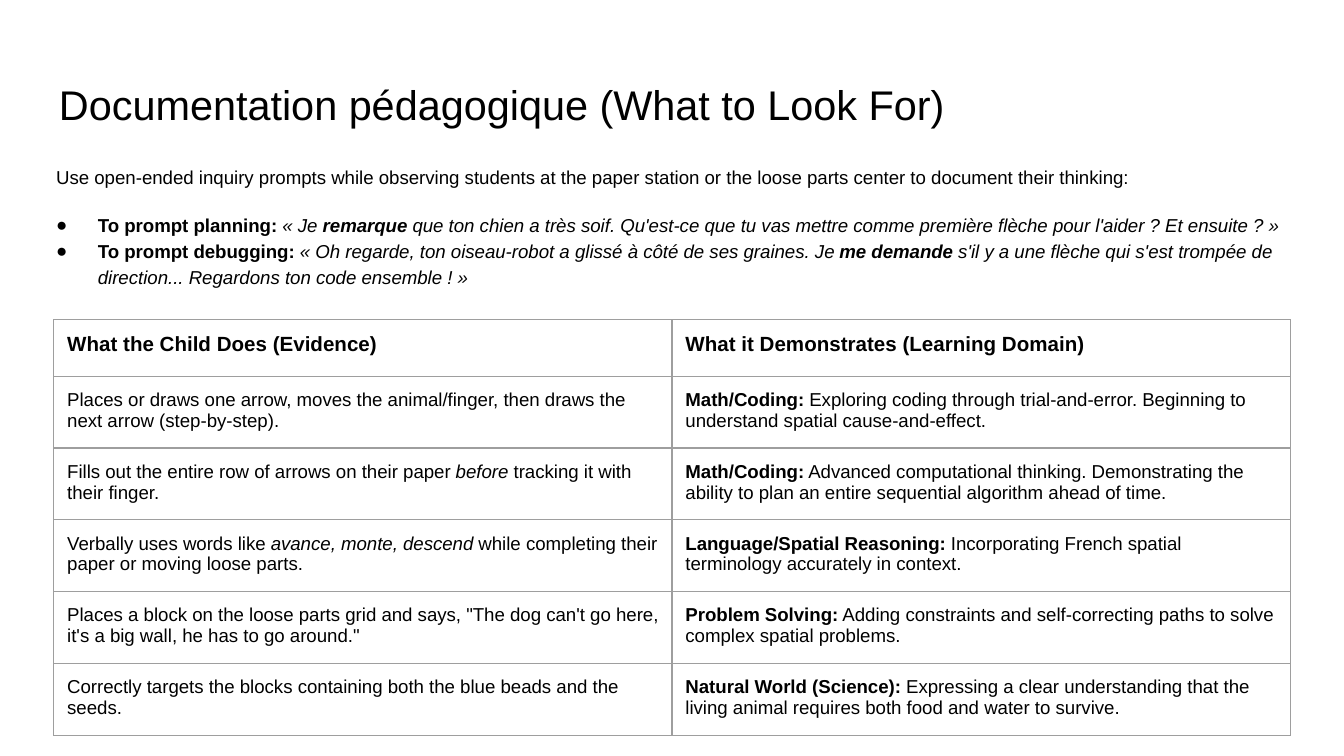
"""Build a slide on pedagogical documentation: inquiry prompts above an evidence table."""
from lxml.etree import SubElement
from pptx import Presentation
from pptx.dml.color import RGBColor
from pptx.enum.text import MSO_ANCHOR as Anchor
from pptx.oxml.ns import qn
from pptx.util import Inches, Pt

COLORS = {"text": "000000", "border": "9E9E9E"}
FONT = "Arial"
SIZES = {"title": 22.2, "header": 11, "body": 10}
STYLES = {
    "plain": {"bold": False, "italic": False},
    "bold": {"bold": True, "italic": False},
    "italic": {"bold": False, "italic": True},
    "both": {"bold": True, "italic": True},
}

TITLE = [("Documentation pédagogique (What to Look For)", "plain")]
INTRO = [("Use open-ended inquiry prompts while observing students at the paper station "
          "or the loose parts center to document their thinking:", "plain")]
PROMPTS = [
    [("To prompt planning: ", "bold"), ("« Je ", "italic"), ("remarque", "both"),
     (" que ton chien a très soif. Qu'est-ce que tu vas mettre comme première flèche "
      "pour l'aider ? Et ensuite ? »", "italic")],
    [("To prompt debugging: ", "bold"),
     ("« Oh regarde, ton oiseau-robot a glissé à côté de ses graines. Je ", "italic"),
     ("me demande", "both"),
     (" s'il y a une flèche qui s'est trompée de direction... "
      "Regardons ton code ensemble ! »", "italic")],
]
HEADERS = ["What the Child Does (Evidence)", "What it Demonstrates (Learning Domain)"]
EVIDENCE = [
    ([("Places or draws one arrow, moves the animal/finger, then draws the next arrow "
       "(step-by-step).", "plain")],
     "Math/Coding:",
     " Exploring coding through trial-and-error. Beginning to understand spatial "
     "cause-and-effect."),
    ([("Fills out the entire row of arrows on their paper ", "plain"), ("before", "italic"),
      (" tracking it with their finger.", "plain")],
     "Math/Coding:",
     " Advanced computational thinking. Demonstrating the ability to plan an entire "
     "sequential algorithm ahead of time."),
    ([("Verbally uses words like ", "plain"), ("avance, monte, descend", "italic"),
      (" while completing their paper or moving loose parts.", "plain")],
     "Language/Spatial Reasoning:",
     " Incorporating French spatial terminology accurately in context."),
    ([("Places a block on the loose parts grid and says, \"The dog can't go here, "
       "it's a big wall, he has to go around.\"", "plain")],
     "Problem Solving:",
     " Adding constraints and self-correcting paths to solve complex spatial problems."),
    ([("Correctly targets the blocks containing both the blue beads and the seeds.", "plain")],
     "Natural World (Science):",
     " Expressing a clear understanding that the living animal requires both food and "
     "water to survive."),
]

SLIDE_WIDTH = Inches(10)
SLIDE_HEIGHT = SLIDE_WIDTH * 9 // 16
TITLE_BOX = (0.34, 0.49, 9.32, 0.63)
PROMPT_BOX = (0.32, 1.11, 9.36, 1.62)
TABLE_LEFT, TABLE_TOP = 0.4, 2.38
COLUMN_WIDTH, ROW_HEIGHT = 4.6, 0.42
MARGIN = Inches(0.1)
MARGINS = {f"margin_{side}": MARGIN for side in ("left", "top", "right", "bottom")}
BULLET_INDENT = Inches(0.31)


def apply(target, values):
    for name, value in values.items():
        setattr(target, name, value)


def write(paragraph, runs, size, **spacing):
    apply(paragraph, spacing)
    for text, style in runs:
        run = paragraph.add_run()
        run.text = text
        apply(run.font, {"name": FONT, "size": Pt(size), **STYLES[style]})
        run.font.color.rgb = RGBColor.from_string(COLORS["text"])


def add_color(parent, color):
    SubElement(parent, qn("a:srgbClr"), val=color)


def add_bullet(paragraph):
    properties = paragraph._p.get_or_add_pPr()
    properties.set("marL", str(BULLET_INDENT))
    properties.set("indent", str(-BULLET_INDENT))
    add_color(SubElement(properties, qn("a:buClr")), COLORS["text"])
    SubElement(properties, qn("a:buFont"), typeface=FONT)
    SubElement(properties, qn("a:buChar"), char="●")


def add_text_frame(slide, box):
    frame = slide.shapes.add_textbox(*map(Inches, box)).text_frame
    apply(frame, {"word_wrap": True, "vertical_anchor": Anchor.TOP, **MARGINS})
    return frame


def add_prompts(slide):
    frame = add_text_frame(slide, PROMPT_BOX)
    spacing = {"line_spacing": 1.15, "space_before": Pt(12)}
    write(frame.paragraphs[0], INTRO, SIZES["body"], **spacing)
    for runs, before in zip(PROMPTS, (12, 0)):
        paragraph = frame.add_paragraph()
        write(paragraph, runs, SIZES["body"], **{**spacing, "space_before": Pt(before)})
        add_bullet(paragraph)


def fill_cell(cell, runs, size):
    apply(cell, {"vertical_anchor": Anchor.TOP, **MARGINS})
    write(cell.text_frame.paragraphs[0], runs, size)
    properties = cell._tc.get_or_add_tcPr()
    for side in ("lnL", "lnR", "lnT", "lnB"):
        line = SubElement(properties, qn(f"a:{side}"), w=str(Pt(0.75)))
        add_color(SubElement(line, qn("a:solidFill")), COLORS["border"])
    cell.fill.background()


def add_evidence_table(slide):
    rows = [[[(header, "bold")] for header in HEADERS]]
    rows += [[action, [(domain, "bold"), (meaning, "plain")]]
             for action, domain, meaning in EVIDENCE]
    table = slide.shapes.add_table(
        len(rows), len(HEADERS), Inches(TABLE_LEFT), Inches(TABLE_TOP),
        Inches(COLUMN_WIDTH * len(HEADERS)), Inches(ROW_HEIGHT * len(rows))).table
    apply(table, {"first_row": False, "horz_banding": False})
    for row_index, row in enumerate(rows):
        size = SIZES["body" if row_index else "header"]
        for column_index, runs in enumerate(row):
            fill_cell(table.cell(row_index, column_index), runs, size)


def main():
    presentation = Presentation()
    apply(presentation, {"slide_width": SLIDE_WIDTH, "slide_height": SLIDE_HEIGHT})
    slide = presentation.slides.add_slide(presentation.slide_layouts[6])
    title = add_text_frame(slide, TITLE_BOX)
    write(title.paragraphs[0], TITLE, SIZES["title"])
    add_prompts(slide)
    add_evidence_table(slide)
    presentation.save("out.pptx")


if __name__ == "__main__":
    main()
